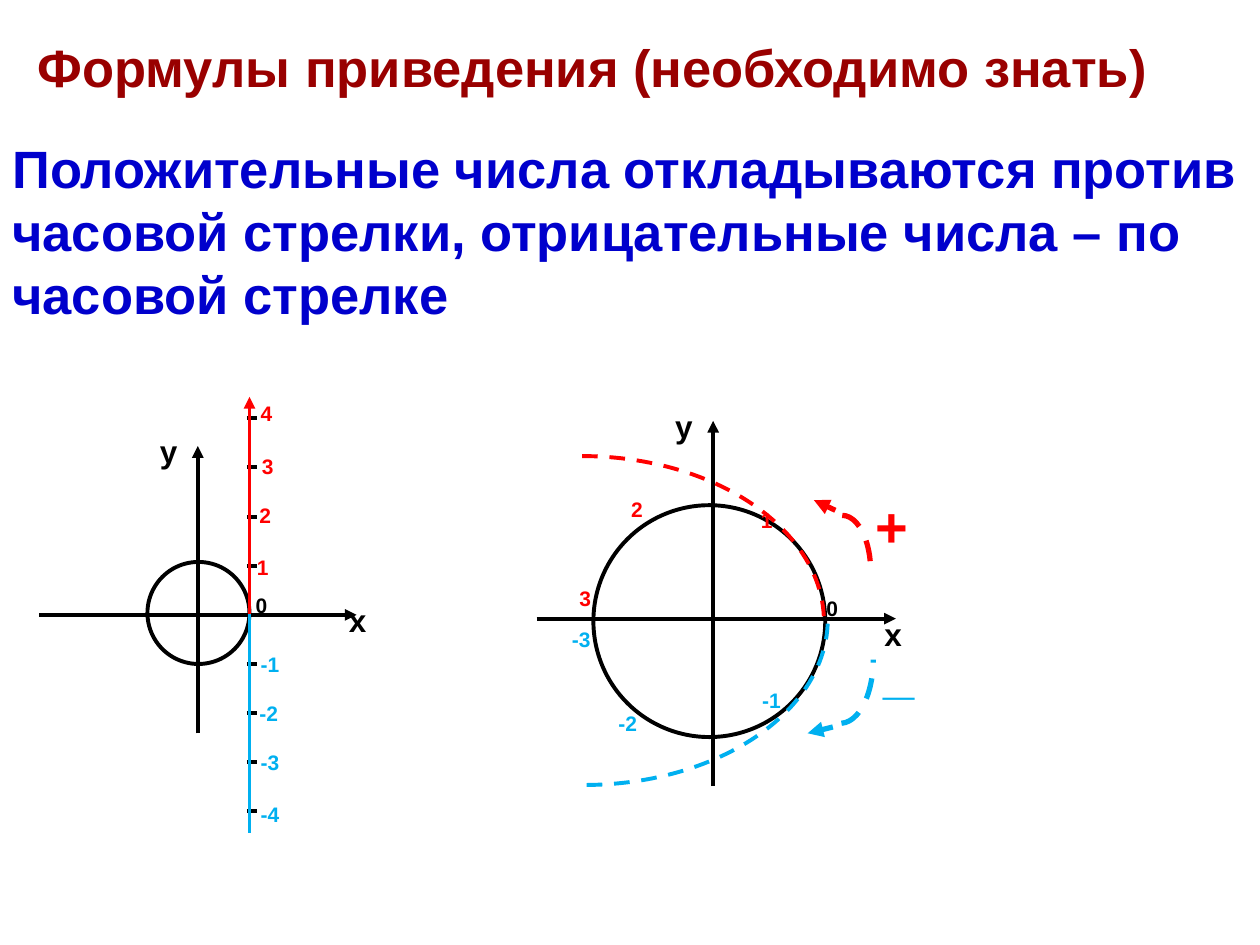
from pptx import Presentation, util as u
from pptx.dml.color import RGBColor
from pptx.enum import dml, shapes, text
from pptx.oxml import ns, xmlchemy as xml

BLACK = RGBColor(0, 0, 0)
WHITE = RGBColor(255, 255, 255)
RED = RGBColor(255, 0, 0)
SKY = RGBColor(0, 0xB0, 0xF0)
BLUE = RGBColor(0, 0, 0xCC)
WINE = RGBColor(0x99, 0, 0)
ARC = shapes.MSO_SHAPE.ARC
OVAL = shapes.MSO_SHAPE.OVAL
RECT = shapes.MSO_SHAPE.RECTANGLE


class Pen:
    """Draws styled elements on the current slide."""

    def __init__(self, slide, font="Arial"):
        self.slide = slide
        self.font = font

    def stroke(self, line, color, width, dash=False):
        line.color.rgb = color
        line.width = u.Pt(width)
        if dash:
            line.dash_style = dml.MSO_LINE.DASH

    def letter(self, frame, words, size, color, wrap=True):
        grow = text.MSO_AUTO_SIZE.NONE if wrap else text.MSO_AUTO_SIZE.SHAPE_TO_FIT_TEXT
        anchor = text.MSO_ANCHOR.MIDDLE if wrap else text.MSO_ANCHOR.TOP
        look = {"word_wrap": wrap, "auto_size": grow, "vertical_anchor": anchor}
        for key, val in look.items():
            setattr(frame, key, val)
        para = frame.paragraphs[0]
        para.alignment = text.PP_ALIGN.LEFT
        run = para.add_run()
        run.text = words
        for key, val in {"name": self.font, "size": u.Pt(size), "bold": True}.items():
            setattr(run.font, key, val)
        run.font.color.rgb = color

    def label(self, words, box, size, color, wrap=False):
        item = self.slide.shapes.add_textbox(*map(u.Inches, box))
        self.letter(item.text_frame, words, size, color, wrap)

    def shape(self, kind, box, color, width=2.25, dash=False):
        item = self.slide.shapes.add_shape(kind, *map(u.Inches, box))
        item.shadow.inherit = False
        item.fill.background()
        self.stroke(item.line, color, width, dash)
        return item

    def arc(self, box, color, width, down=False):
        item = self.shape(ARC, box, color, width, True)
        if down:
            item.rotation = 180
            item.adjustments[0] = 162.56
            item.element.spPr.find(ns.qn("a:xfrm")).set("flipH", "1")

    def line(self, start, end, color=BLACK, width=2.25, arrow=False):
        item = self.slide.shapes.add_connector(
            shapes.MSO_CONNECTOR.STRAIGHT, *map(u.Inches, start + end))
        self.stroke(item.line, color, width)
        props = item.element.spPr
        if arrow:
            tip = xml.OxmlElement("a:tailEnd")
            tip.set("type", "triangle")
            props.find(ns.qn("a:ln")).append(tip)
        props.append(xml.OxmlElement("a:effectLst"))

    def marks(self, spots):
        for num, left, top in spots:
            color = RED if num > 0 else SKY if num < 0 else BLACK
            wide = 0.35 if num < 0 else 0.29
            self.label(str(num), (left, top, wide, 0.3), 12, color)


def head(pen):
    pen.label("Формулы приведения (необходимо знать)",
              (0.2, 0.13, 9.65, 0.79), 30, WINE, True)
    rule = pen.shape(RECT, (0, 0.93, 10, 1.8), WHITE, 0.5)
    pen.letter(rule.text_frame, "Положительные числа откладываются против часовой "
               "стрелки, отрицательные числа – по часовой стрелке", 30, BLUE)


def ruler(pen):
    pen.line((0.31, 4.88), (2.83, 4.88), arrow=True)
    pen.line((1.57, 5.82), (1.57, 3.54), arrow=True)
    pen.label("x", (2.67, 4.72, 0.34, 0.4), 18, BLACK)
    pen.label("y", (1.17, 3.38, 0.34, 0.4), 18, BLACK)
    pen.shape(OVAL, (1.17, 4.46, 0.81, 0.81), BLACK)
    for num in range(-4, 5):
        if num:
            top = 4.88 - 0.39 * num
            pen.line((1.96, top), (2.04, top))
    pen.line((1.98, 4.87), (1.98, 3.15), RED, arrow=True)
    pen.line((1.98, 4.87), (1.98, 6.61), SKY)
    pen.marks([(1, 1.94, 4.35), (2, 1.96, 3.94), (3, 1.98, 3.55), (4, 1.97, 3.13),
               (0, 1.93, 4.65), (-1, 1.97, 5.12), (-2, 1.96, 5.51),
               (-3, 1.97, 5.9), (-4, 1.97, 6.31)])


def wheel(pen):
    pen.line((5.66, 6.24), (5.66, 3.34), arrow=True)
    pen.label("x", (6.92, 4.83, 0.34, 0.4), 18, BLACK)
    pen.label("y", (5.26, 3.18, 0.34, 0.4), 18, BLACK)
    pen.shape(OVAL, (4.71, 4.01, 1.84, 1.84), BLACK)
    pen.marks([(1, 5.94, 3.98), (2, 4.91, 3.89), (3, 4.5, 4.6), (0, 6.46, 4.68),
               (-1, 5.95, 5.41), (-2, 4.81, 5.59), (-3, 4.44, 4.92)])
    pen.line((4.26, 4.91), (7.11, 4.91), arrow=True)
    pen.arc((2.7, 3.62, 3.84, 2.63), RED, 2.25)
    pen.arc((2.7, 3.6, 3.87, 2.63), SKY, 2.25, True)
    pen.arc((6.46, 4.09, 0.45, 0.88), RED, 3)
    pen.line((6.63, 4.05), (6.46, 3.97), RED, 3, True)
    pen.arc((6.41, 4.73, 0.52, 1.01), SKY, 3, True)
    pen.line((6.61, 5.77), (6.41, 5.82), SKY, 3, True)
    pen.label("+", (6.85, 3.85, 0.46, 0.64), 32, RED)
    pen.label("_", (6.91, 5.01, 0.45, 0.64), 32, SKY)


def main():
    deck = Presentation()
    deck.slide_width, deck.slide_height = u.Inches(10), u.Inches(7.5)
    pen = Pen(deck.slides.add_slide(deck.slide_layouts[6]))
    for draw in (head, ruler, wheel):
        draw(pen)
    deck.save("out.pptx")


if __name__ == "__main__":
    main()
